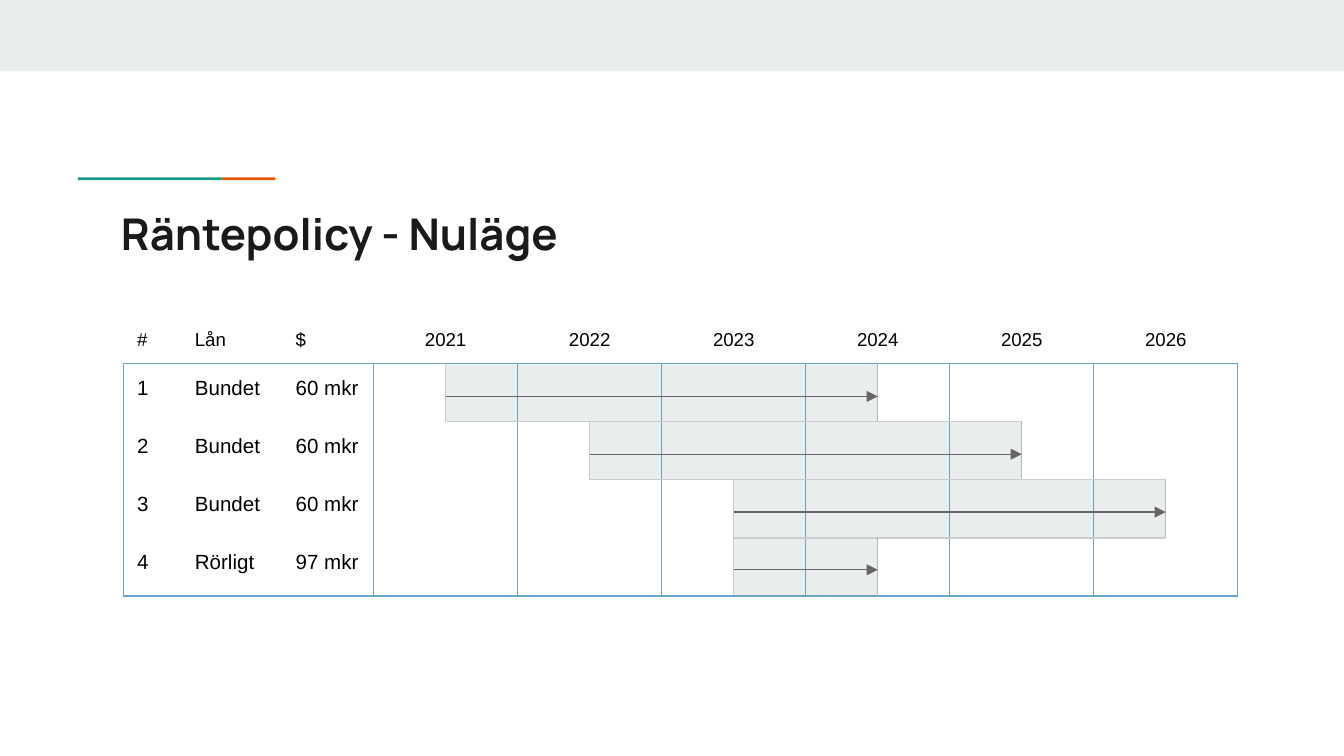
from lxml import etree
from pptx import Presentation
from pptx.dml.color import RGBColor
from pptx.enum import shapes, text
from pptx.oxml import ns
from pptx.util import Inches, Pt

PALE, BLUE, GREY, EDGE = "E9EDEE", "6AA4C8", "CCCCCC", "B7B7B7"
NO_STYLE = "{2D5ABB26-0587-4C30-8999-92F81FD0307C}"
YEARS = range(2021, 2027)
HALVES = 2 * len(YEARS)
LABEL_WIDTHS = [0.43, 0.75, 0.68]
LABELS = len(LABEL_WIDTHS)
HALF = 6.43 / HALVES
# number, type, amount, first and last boundary in half-years from 2021
LOANS = [
    ("1", "Bundet", "60 mkr", 1, 7),
    ("2", "Bundet", "60 mkr", 3, 9),
    ("3", "Bundet", "60 mkr", 5, 11),
    ("4", "Rörligt", "97 mkr", 5, 7),
]


def rgb(value):
    return RGBColor.from_string(value)


def add_rect(slide, x, y, w, h, color):
    sp = slide.shapes.add_shape(shapes.MSO_SHAPE.RECTANGLE,
                                Inches(x), Inches(y), Inches(w), Inches(h))
    sp.shadow.inherit = False
    sp.fill.solid()
    sp.fill.fore_color.rgb = rgb(color)
    sp.line.fill.background()


def add_run(p, words, size, font, color, bold=False):
    r = p.add_run()
    r.text = words
    r.font.size, r.font.name, r.font.bold = Pt(size), font, bold
    r.font.color.rgb = rgb(color)


def add_accent(slide, x, y, w, h):
    green = round(w * 0.73, 2)
    add_rect(slide, x, y, green, h, "1A9988")
    add_rect(slide, x + green, y, w - green, h, "EB5600")


def set_title(slide, x, y, w, h, words):
    sp = slide.shapes.title
    sp.left, sp.top, sp.width, sp.height = map(Inches, (x, y, w, h))
    tf = sp.text_frame
    tf.auto_size = text.MSO_AUTO_SIZE.NONE
    tf.vertical_anchor = text.MSO_ANCHOR.TOP
    tf.margin_left = tf.margin_right = tf.margin_top = tf.margin_bottom = Inches(0.1)
    p = tf.paragraphs[0]
    p.alignment = text.PP_ALIGN.LEFT
    add_run(p, words, 23.4, "Manrope", "1A1A1A", True)


def set_cell_margins(cell, size):
    cell.margin_left = cell.margin_right = Inches(size)
    cell.margin_top = cell.margin_bottom = Inches(size)


def write_cell(cell, words, size, align=text.PP_ALIGN.LEFT):
    set_cell_margins(cell, 0.1)
    p = cell.text_frame.paragraphs[0]
    p.alignment = align
    add_run(p, words, size, "Arial", "000000")


def set_borders(cell, colors):
    """Draw the sides given as {"L", "R", "T", "B": colour}; None is no line."""
    tc_pr = cell._tc.get_or_add_tcPr()
    for i, side in enumerate("LRTB"):
        ln = etree.Element(ns.qn("a:ln" + side), w=str(Pt(0.75)))
        if colors.get(side):
            fill = etree.SubElement(ln, ns.qn("a:solidFill"))
            etree.SubElement(fill, ns.qn("a:srgbClr"), val=colors[side])
        else:
            etree.SubElement(ln, ns.qn("a:noFill"))
        tc_pr.insert(i, ln)


def in_bar(row, half):
    return 0 <= row < len(LOANS) and LOANS[row][3] <= half < LOANS[row][4]


def vertical_color(row, boundary):
    """Colour of the line at a half-year boundary: year line or bar edge."""
    start, end = LOANS[row][3:]
    if boundary % 2 == 0:
        return BLUE
    return {start: GREY, end: EDGE}.get(boundary)


def horizontal_color(boundary, half):
    """Colour of the line above the loan row with this index."""
    if boundary in (0, len(LOANS)):
        return BLUE
    return GREY if in_bar(boundary - 1, half) or in_bar(boundary, half) else None


def cell_borders(row, col):
    half = col - LABELS
    if half >= 0:
        left, right = vertical_color(row, half), vertical_color(row, half + 1)
    else:
        left = BLUE if col == 0 else None
        right = BLUE if half == -1 else None
    return {"L": left, "R": right, "T": horizontal_color(row, half),
            "B": horizontal_color(row + 1, half)}


def add_schedule(slide, x, y, header_h, loans_h):
    row_h = loans_h / len(LOANS)
    widths = LABEL_WIDTHS + [HALF] * HALVES
    frame = slide.shapes.add_table(
        len(LOANS) + 1, len(widths), Inches(x), Inches(y),
        Inches(sum(widths)), Inches(header_h + loans_h))
    table = frame.table
    table.first_row = table.horz_banding = False
    table._tbl.tblPr.find(ns.qn("a:tableStyleId")).text = NO_STYLE
    for column, width in zip(table.columns, widths):
        column.width = Inches(width)
    for i, row in enumerate(table.rows):
        row.height = Inches(row_h if i else header_h)
        for col, cell in enumerate(row.cells):
            set_cell_margins(cell, 0)
            if in_bar(i - 1, col - LABELS):
                cell.fill.solid()
                cell.fill.fore_color.rgb = rgb(PALE)
            else:
                cell.fill.background()
            set_borders(cell, cell_borders(i - 1, col) if i else {"B": BLUE})

    for col, words in enumerate(("#", "Lån", "$")):
        write_cell(table.cell(0, col), words, 10)
    for i, year in enumerate(YEARS):
        col = LABELS + 2 * i
        table.cell(0, col).merge(table.cell(0, col + 1))
        write_cell(table.cell(0, col), str(year), 10, text.PP_ALIGN.CENTER)
    for i, loan in enumerate(LOANS, 1):
        for col, words in enumerate(loan[:LABELS]):
            write_cell(table.cell(i, col), words, 11)


def add_arrows(slide, x, y, step):
    for i, (*_, start, end) in enumerate(LOANS):
        line_y = Inches(y + i * step)
        line = slide.shapes.add_connector(
            shapes.MSO_CONNECTOR.STRAIGHT, Inches(x + start * HALF), line_y,
            Inches(x + end * HALF), line_y)
        line.line.color.rgb = rgb("666666")
        line.line.width = Pt(0.75)
        etree.SubElement(line.line._get_or_add_ln(), ns.qn("a:tailEnd"), type="triangle")
        etree.SubElement(line._element.spPr, ns.qn("a:effectLst"))


def main():
    prs = Presentation()
    prs.slide_width, prs.slide_height = Inches(10), Inches(10 * 9 / 16)
    slide = prs.slides.add_slide(prs.slide_layouts[5])
    add_rect(slide, 0, 0, 10, 0.53, PALE)
    add_accent(slide, 0.58, 1.32, 1.47, 0.02)
    set_title(slide, 0.8, 1.44, 8.41, 0.59, "Räntepolicy - Nuläge")
    left, top = 0.92, 2.35
    add_schedule(slide, left, top, 0.33, 1.73)
    add_arrows(slide, left + sum(LABEL_WIDTHS), top + 0.6, 0.43)
    prs.save("out.pptx")


if __name__ == "__main__":
    main()
